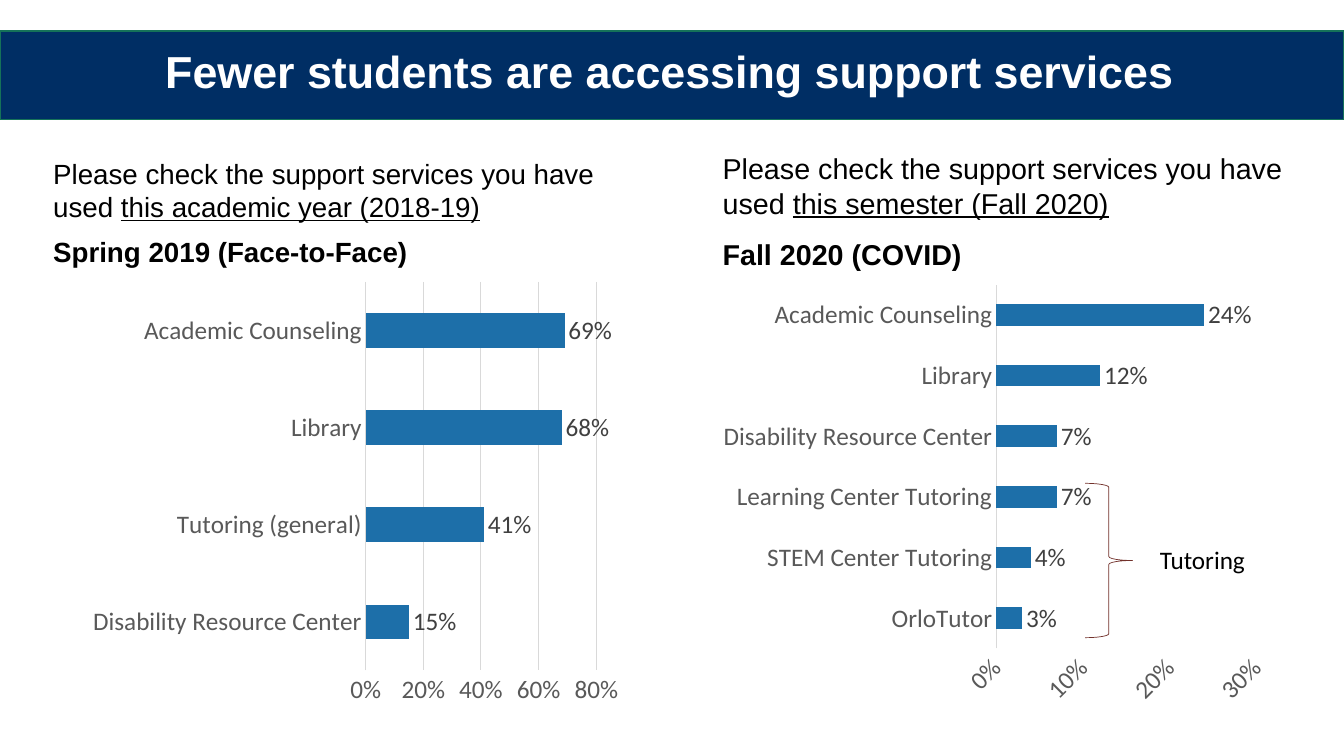
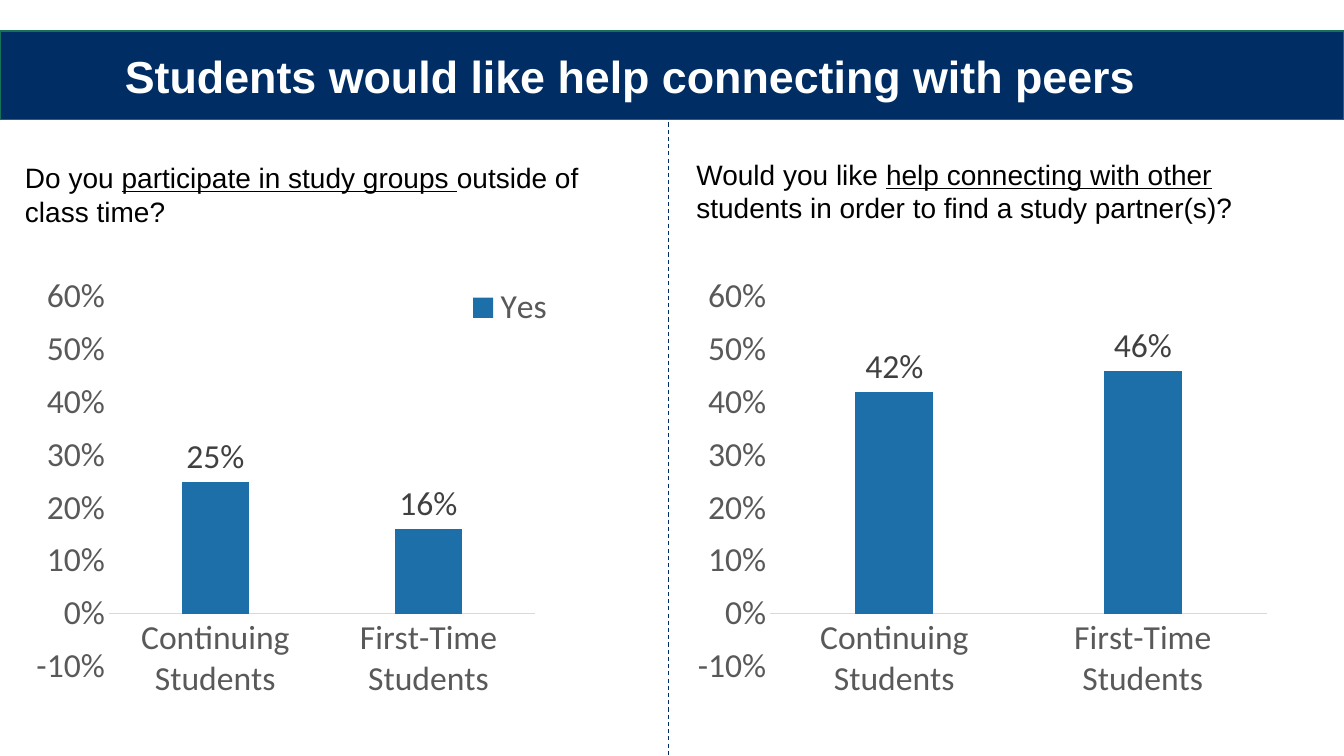
from collections import namedtuple

from lxml.etree import SubElement
from pptx import Presentation
from pptx.chart.data import CategoryChartData
from pptx.dml.color import RGBColor
from pptx.enum.chart import XL_CHART_TYPE as ChartType
from pptx.enum.chart import XL_LABEL_POSITION as LabelPosition
from pptx.enum.chart import XL_LEGEND_POSITION as LegendPosition
from pptx.enum.chart import XL_TICK_MARK as TickMark
from pptx.enum.dml import MSO_LINE as LineStyle
from pptx.enum.shapes import MSO_CONNECTOR as Connector
from pptx.enum.shapes import MSO_SHAPE as Preset
from pptx.enum.text import MSO_ANCHOR as Anchor
from pptx.enum.text import PP_ALIGN as Align
from pptx.oxml import parse_xml
from pptx.oxml.ns import nsdecls, qn
from pptx.util import Cm, Pt

Box = namedtuple("Box", "left top width height")

NAVY, GREEN, BLUE, BROWN = "002E64", "157259", "1D6FA9", "72312B"
WHITE, BLACK = "FFFFFF", "000000"
AXIS_TEXT, LABEL_TEXT, PALE_LINE = "595959", "404040", "D9D9D9"
SLIDE_WIDTH, SLIDE_HEIGHT = 33.87, 19.05
BAND = Box(0, 0.78, SLIDE_WIDTH, 2.24)
TITLE_WIDTH = 30
QUESTION_WIDTH, QUESTION_HEIGHT = 15.2, 3
STUDENTS = ["Continuing Students", "First-Time Students"]


def color(hex_text):
    """Turn a hex string into a colour."""
    return RGBColor.from_string(hex_text)


def lengths(box):
    """Give the four sides of a box as lengths."""
    return [Cm(value) for value in box]


def style_font(font, size, hex_text, name="Calibri", bold=False, underline=False):
    """Set the look of a font."""
    font.size, font.name = Pt(size), name
    font.bold, font.underline = bold, underline
    font.color.rgb = color(hex_text)


def style_line(line, hex_text, width):
    """Set colour and width of a line."""
    line.color.rgb = color(hex_text)
    line.width = Pt(width)


def add_text_frame(slide, box, anchor, wrap=True):
    """Add a text box and return its text frame."""
    frame = slide.shapes.add_textbox(*lengths(box)).text_frame
    frame.word_wrap = wrap
    frame.vertical_anchor = anchor
    return frame


def add_band(slide, band, title, shift_x, shift_y):
    """Draw the title band with its title shifted from the centre."""
    shape = slide.shapes.add_shape(Preset.RECTANGLE, *lengths(band))
    shape.shadow.inherit = False
    shape.fill.solid()
    shape.fill.fore_color.rgb = color(NAVY)
    style_line(shape.line, GREEN, 1)
    left = band.left + (band.width - TITLE_WIDTH) / 2 + shift_x
    box = Box(left, band.top + shift_y, TITLE_WIDTH, band.height)
    paragraph = add_text_frame(slide, box, Anchor.MIDDLE).paragraphs[0]
    paragraph.text = title
    paragraph.alignment = Align.CENTER
    style_font(paragraph.runs[0].font, 32, WHITE, "Arial", bold=True)


def add_question(slide, left, top, size, parts, heading=None, gap=0):
    """Write a question whose second part is underlined, and a bold heading."""
    box = Box(left, top, QUESTION_WIDTH, QUESTION_HEIGHT)
    frame = add_text_frame(slide, box, Anchor.TOP)
    for index, part in enumerate(parts):
        run = frame.paragraphs[0].add_run()
        run.text = part
        style_font(run.font, size, BLACK, "Arial", underline=index == 1)
    if heading:
        paragraph = frame.add_paragraph()
        paragraph.text = heading
        paragraph.space_before = Pt(gap)
        style_font(paragraph.runs[0].font, size, BLACK, "Arial", bold=True)


def set_layout(parent, index, area, inner=False):
    """Fix the place of a chart part as fractions of the chart."""
    for old in parent.findall(qn("c:layout")):
        parent.remove(old)
    layout = parse_xml(f"<c:layout {nsdecls('c')}/>")
    manual = SubElement(layout, qn("c:manualLayout"))
    entries = [("layoutTarget", "inner")] if inner else []
    entries += [("xMode", "edge"), ("yMode", "edge")]
    entries += zip("xywh", area)
    for tag, value in entries:
        SubElement(manual, qn(f"c:{tag}")).set("val", str(value))
    parent.insert(index, layout)


def style_axis(axis, size):
    """Set the common look of an axis."""
    axis.major_tick_mark = axis.minor_tick_mark = TickMark.NONE
    axis.has_major_gridlines = False
    style_font(axis.tick_labels.font, size, AXIS_TEXT)


def add_bar_chart(slide, box, kind, categories, values, area, limits, size, gap,
                  overlap=0, name="Series 1"):
    """Add a chart of one series; limits are minimum, maximum and step."""
    data = CategoryChartData(number_format="0%")
    data.categories = categories
    data.add_series(name, values)
    chart = slide.shapes.add_chart(kind, *lengths(box), data).chart
    chart.has_title = chart.has_legend = False
    style_font(chart.font, size, BLACK)
    set_layout(chart.plots[0]._element.getparent(), 0, area, inner=True)

    plot = chart.plots[0]
    plot.vary_by_categories = False
    plot.gap_width, plot.overlap = gap, overlap
    fill = plot.series[0].format.fill
    fill.solid()
    fill.fore_color.rgb = color(BLUE)
    plot.has_data_labels = True
    labels = plot.data_labels
    labels.show_value = True
    labels.position = LabelPosition.OUTSIDE_END
    labels.number_format, labels.number_format_is_linked = "0%", False
    style_font(labels.font, size, LABEL_TEXT)

    style_axis(chart.category_axis, size)
    style_line(chart.category_axis.format.line, PALE_LINE, 0.75)
    axis = chart.value_axis
    style_axis(axis, size)
    axis.format.line.fill.background()
    axis.minimum_scale, axis.maximum_scale, axis.major_unit = limits
    axis.tick_labels.number_format = "0%"
    axis.tick_labels.number_format_is_linked = False
    return chart


def add_tutoring_brace(slide, chart_box):
    """Bracket the tutoring bars of a chart and label them."""
    left, top = chart_box.left, chart_box.top
    brace = slide.shapes.add_shape(
        Preset.RIGHT_BRACE, *lengths(Box(left + 9.37, top + 5.23, 1.19, 3.89)))
    brace.shadow.inherit = False
    brace.fill.background()
    style_line(brace.line, BROWN, 0.5)
    label = Box(left + 11, top + 6.63, 2.69, 1.02)
    frame = add_text_frame(slide, label, Anchor.TOP, wrap=False)
    frame.text = "Tutoring"
    style_font(frame.paragraphs[0].runs[0].font, 18, BLACK)


def add_divider(slide, x, top, bottom):
    """Draw a dashed vertical line."""
    line = slide.shapes.add_connector(
        Connector.STRAIGHT, Cm(x), Cm(top), Cm(x), Cm(bottom))
    style_line(line.line, NAVY, 0.75)
    line.line.dash_style = LineStyle.DASH
    SubElement(line._element.spPr, qn("a:effectLst"))


def build_services_slide(slide):
    """Compare the use of support services in two terms."""
    add_band(slide, BAND, "Fewer students are accessing support services", -0.05, -0.12)
    prompt = "Please check the support services you have used "
    add_question(slide, 1.09, 3.82, 19.8, [prompt, "this academic year (2018-19)"],
                 "Spring 2019 (Face-to-Face)", 8.5)
    add_question(slide, 17.96, 3.68, 20.5, [prompt, "this semester (Fall 2020)"],
                 "Fall 2020 (COVID)", 12)

    spring = add_bar_chart(
        slide, Box(2.02, 6.88, 13.84, 11.13), ChartType.BAR_CLUSTERED,
        ["Disability Resource Center", "Tutoring (general)", "Library",
         "Academic Counseling"],
        [0.15, 0.41, 0.68, 0.69], (0.52, 0.02, 0.42, 0.88), (0, 0.8, 0.2), 18, 182)
    spring.value_axis.has_major_gridlines = True
    style_line(spring.value_axis.major_gridlines.format.line, PALE_LINE, 0.75)

    fall_box = Box(17.98, 6.95, 14.25, 11.05)
    fall = add_bar_chart(
        slide, fall_box, ChartType.BAR_CLUSTERED,
        ["OrloTutor", "STEM Center Tutoring", "Learning Center Tutoring",
         "Disability Resource Center", "Library", "Academic Counseling"],
        [0.03, 0.04, 0.07, 0.07, 0.12, 0.24], (0.5, 0.02, 0.46, 0.83),
        (0, 0.3, 0.1), 18, 182)
    body = fall.value_axis._element.find(qn("c:txPr")).find(qn("a:bodyPr"))
    body.set("rot", "-2700000")
    add_tutoring_brace(slide, fall_box)


def build_peers_slide(slide):
    """Show study group use and the wish for help finding partners."""
    add_band(slide, BAND, "Students would like help connecting with peers", -1.04, 0.01)
    add_question(slide, 0.38, 3.92, 20, [
        "Do you ", "participate in study groups ", "outside of class time?"])
    add_question(slide, 17.3, 3.84, 20, [
        "Would you like ", "help connecting with other ",
        "students in order to find a study partner(s)?"])

    panels = [
        (Box(0.53, 6.81, 15.8, 11.1), "Yes", [0.25, 0.16], (0.14, 0.06, 0.68, 0.84)),
        (Box(17.32, 6.81, 14.91, 11.1), "Series 1", [0.42, 0.46],
         (0.14, 0.06, 0.84, 0.84)),
    ]
    groups, _ = [
        add_bar_chart(slide, box, ChartType.COLUMN_CLUSTERED, STUDENTS, values, area,
                      (-0.1, 0.6, 0.1), 24, 219, -27, name)
        for box, name, values, area in panels]
    groups.has_legend = True
    groups.legend.position = LegendPosition.RIGHT
    groups.legend.include_in_layout = False
    style_font(groups.legend.font, 24, AXIS_TEXT)
    set_layout(groups.legend._element, 1, (0.71, 0.03, 0.14, 0.11))
    add_divider(slide, 16.84, 2.72, SLIDE_HEIGHT)


def main():
    """Build and save the presentation."""
    presentation = Presentation()
    presentation.slide_width = Cm(SLIDE_WIDTH)
    presentation.slide_height = Cm(SLIDE_HEIGHT)
    for build in (build_services_slide, build_peers_slide):
        build(presentation.slides.add_slide(presentation.slide_layouts[6]))
    presentation.save("out.pptx")


if __name__ == "__main__":
    main()
